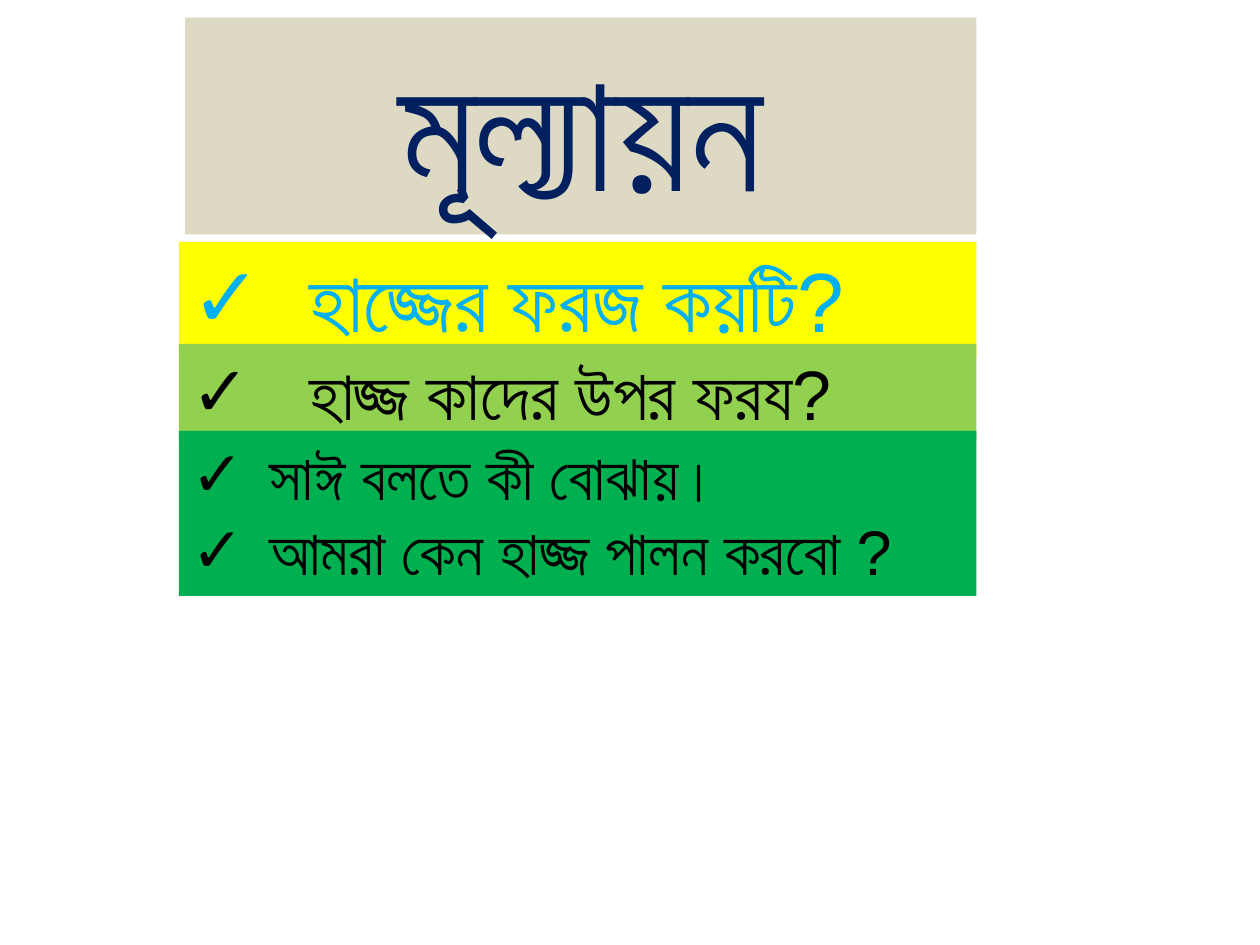
"""Build the evaluation slide: a title band above three bands of check-marked questions."""
from lxml import etree
from pptx import Presentation
from pptx import util as u
from pptx.dml.color import RGBColor
from pptx.enum import text
from pptx.oxml.ns import qn


def colour(hex_code):
    return RGBColor.from_string(hex_code)


class EvaluationSlide:
    font_name = "Arial"
    check_mark = "✓"

    def __init__(self, deck):
        self.slide = deck.slides.add_slide(deck.slide_layouts[6])

    def band(self, left, top, width, height, fill):
        box = self.slide.shapes.add_textbox(*map(u.Inches, (left, top, width, height)))
        box.fill.solid()
        box.fill.fore_color.rgb = colour(fill)
        box.text_frame.word_wrap = True
        box.text_frame.auto_size = text.MSO_AUTO_SIZE.SHAPE_TO_FIT_TEXT
        return box.text_frame

    def style(self, paragraph, size, ink):
        paragraph.font.name = self.font_name
        paragraph.font.size = u.Pt(size)
        paragraph.font.color.rgb = colour(ink)

    def title(self, wording, place, fill, size, ink):
        heading = self.band(*place, fill).paragraphs[0]
        heading.text = wording
        heading.alignment = text.PP_ALIGN.CENTER
        self.style(heading, size, ink)

    def questions(self, wordings, top, height, fill, size, ink, indent):
        frame = self.band(1.42, top, 6.33, height, fill)
        frame.text = "\n".join(wordings)
        for question in frame.paragraphs:
            self.check(question, indent)
            self.style(question, size, ink)

    def check(self, question, indent):
        properties = question._p.get_or_add_pPr()
        properties.set("marL", str(u.Inches(indent)))
        properties.set("indent", str(-u.Inches(indent)))
        etree.SubElement(properties, qn("a:buFont"), typeface=self.font_name)
        etree.SubElement(properties, qn("a:buChar"), char=self.check_mark)


def main():
    deck = Presentation()
    deck.slide_width, deck.slide_height = u.Inches(10), u.Inches(7.5)
    evaluation = EvaluationSlide(deck)
    evaluation.title("মূল্যায়ন", (1.47, 0.14, 6.28, 1.72), "DDD9C3", 96, "002060")
    evaluation.questions(["হাজ্জের ফরজ কয়টি?"], 1.92, 0.91, "FFFF00", 48, "00B0F0", 0.94)
    evaluation.questions(["হাজ্জ কাদের উপর ফরয?"], 2.73, 0.77, "92D050", 40, "000000", 0.94)
    evaluation.questions(
        ["সাঈ বলতে কী বোঝায়।", "আমরা কেন হাজ্জ পালন করবো ?"],
        3.42, 1.31, "00B050", 36, "000000", 0.62,
    )
    deck.save("out.pptx")


if __name__ == "__main__":
    main()
